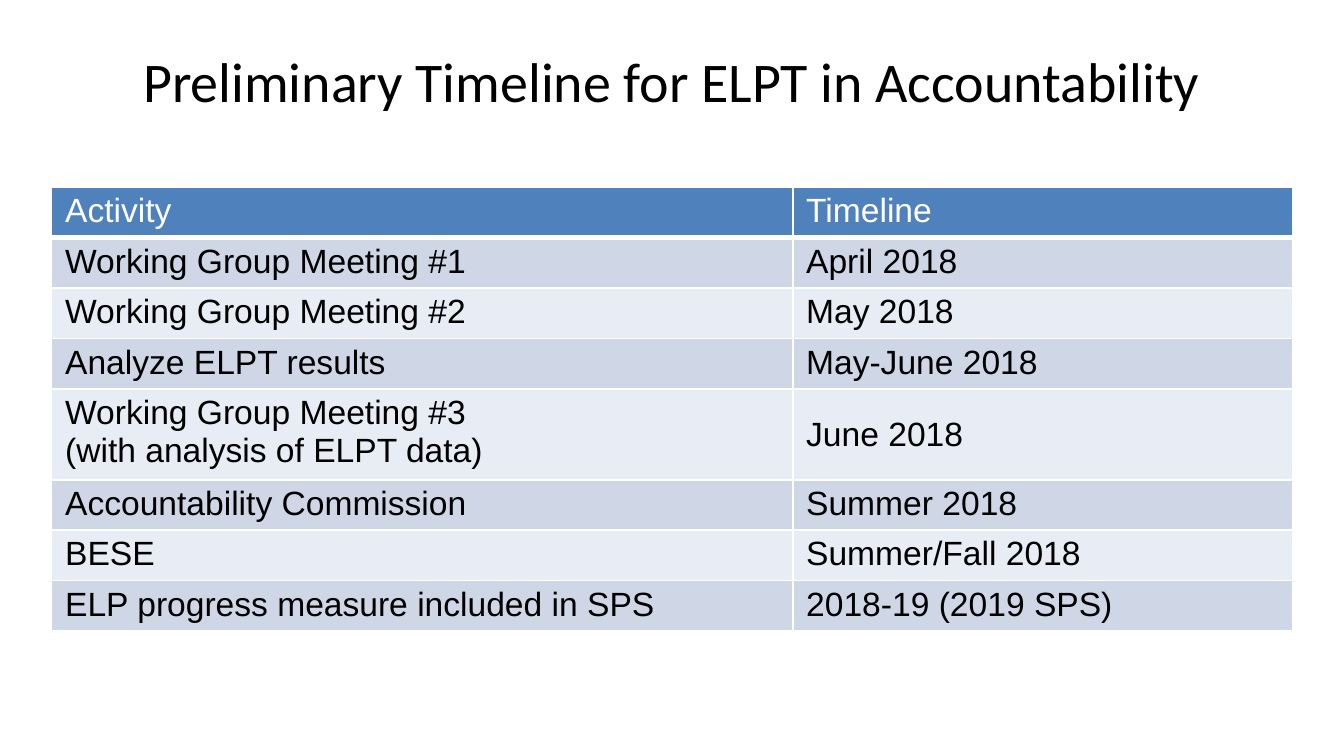
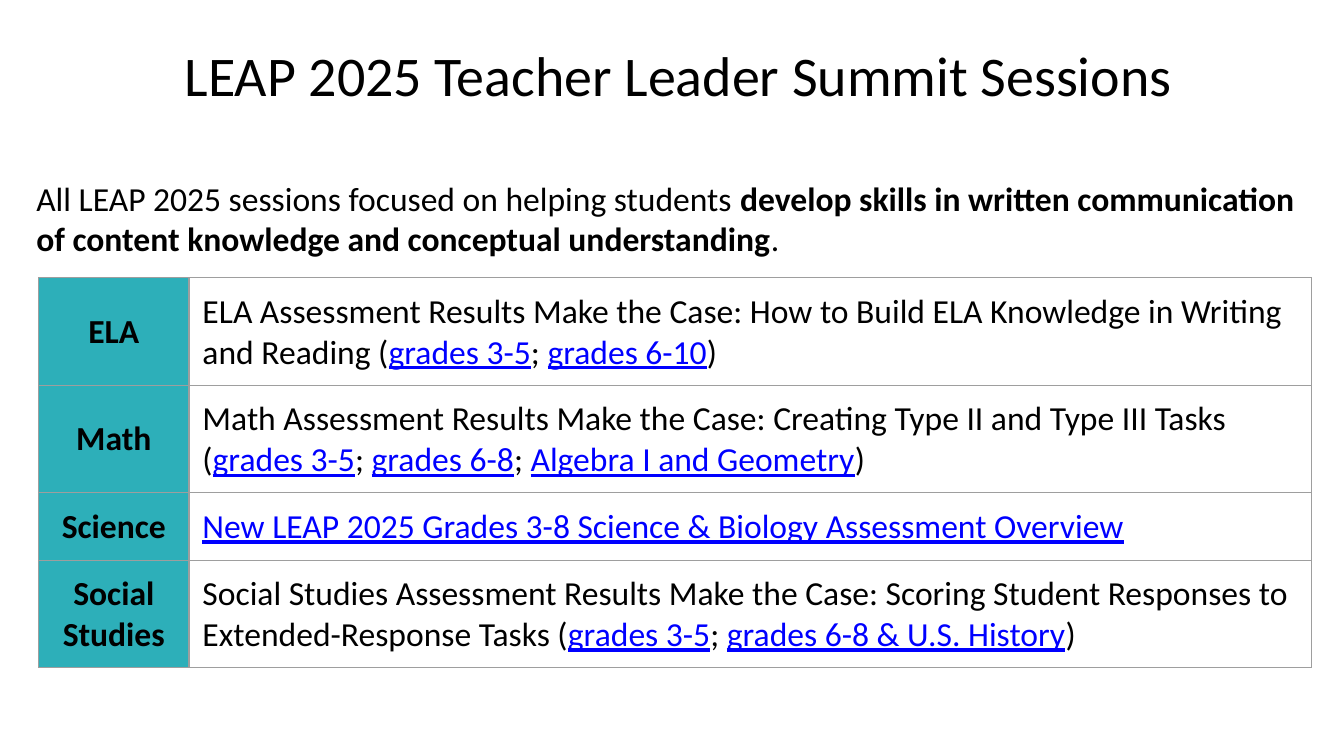
from dataclasses import dataclass, field
from typing import Any

from lxml.etree import SubElement
from pptx import Presentation
from pptx.dml.color import RGBColor
from pptx.enum.text import MSO_ANCHOR as Anchor, PP_ALIGN as Align
from pptx.oxml.ns import qn
from pptx.util import Pt


@dataclass(frozen=True)
class Theme:
    black: str = "000000"
    white: str = "FFFFFF"
    header: str = "4F81BD"
    bands: tuple[str, str] = ("CFD7E7", "E8ECF4")
    teal: str = "2DAFB9"
    grey: str = "9E9E9E"
    link: str = "0000FF"
    title_size: float = 30
    body_size: float = 18
    title_font: str = "Calibri"
    table_font: str = "Arial"


T = Theme()
LINK = {"color": T.link, "underline": True}
BOLD = {"bold": True}


@dataclass(frozen=True)
class TextStyle:
    size: float = T.body_size
    font: str = T.title_font
    color: str = T.black
    bold: bool | None = None
    align: Align = Align.LEFT
    marked: dict[str, Any] = field(default_factory=dict)  # format between "_" marks


@dataclass(frozen=True)
class Cell:
    text: str
    style: TextStyle
    fill: str | None = None
    anchor: Anchor = Anchor.MIDDLE


@dataclass(frozen=True)
class Grid:
    left: float
    top: float
    height: float
    cols: tuple[float, ...]
    rows: tuple[float, ...]
    margin_x: float
    margin_y: float
    border: str
    line: float
    header_line: float | None = None


TITLE = TextStyle(size=T.title_size, align=Align.CENTER)
INTRO = TextStyle(marked=BOLD)
SUBJECT = TextStyle(bold=True, align=Align.CENTER)
SESSION = TextStyle(marked=LINK)
HEADER = TextStyle(font=T.table_font, color=T.white)
ENTRY = TextStyle(font=T.table_font)


# Text
def write(tf, text: str, style: TextStyle) -> None:
    for i, line in enumerate(text.split("\n")):
        p = tf.add_paragraph() if i else tf.paragraphs[0]
        p.alignment = style.align
        for j, part in enumerate(line.split("_")):
            if not part:
                continue
            r = p.add_run()
            r.text = part
            values = {"name": style.font, "size": Pt(style.size), "bold": style.bold,
                      "color": style.color} | (style.marked if j % 2 else {})
            r.font.color.rgb = RGBColor.from_string(values.pop("color"))
            for name, value in values.items():
                setattr(r.font, name, value)


def add_text(s, box: tuple[float, ...], text: str, style: TextStyle,
             anchor: Anchor = Anchor.TOP, margin_y: float = 7.2) -> None:
    tf = s.shapes.add_textbox(*map(Pt, box)).text_frame
    formats = {"word_wrap": True, "vertical_anchor": anchor,
               "margin_left": Pt(7.2), "margin_right": Pt(7.2),
               "margin_top": Pt(margin_y), "margin_bottom": Pt(margin_y)}
    for name, value in formats.items():
        setattr(tf, name, value)
    write(tf, text, style)


# Tables
def add_border(cell, side: str, color: str, width: float) -> None:
    ln = SubElement(cell._tc.get_or_add_tcPr(), qn(f"a:ln{side}"), w=str(Pt(width)))
    fill = SubElement(ln, qn("a:solidFill"))
    SubElement(fill, qn("a:srgbClr"), val=color)


def add_grid(s, grid: Grid, rows: list[list[Cell]]) -> None:
    gf = s.shapes.add_table(len(rows), len(grid.cols), Pt(grid.left), Pt(grid.top),
                            Pt(sum(grid.cols)), Pt(grid.height))
    table = gf.table
    table.first_row = table.horz_banding = grid.header_line is not None
    for col, width in zip(table.columns, grid.cols):
        col.width = Pt(width)
    for row, height in zip(table.rows, grid.rows):
        row.height = Pt(height)
    gf.height = Pt(grid.height)
    for i, row in enumerate(rows):
        for j, item in enumerate(row):
            cell = table.cell(i, j)
            for side in "LRTB":
                under_header = (i, side) in ((0, "B"), (1, "T"))
                width = grid.header_line if under_header and grid.header_line else grid.line
                add_border(cell, side, grid.border, width)
            formats = {"vertical_anchor": item.anchor,
                       "margin_left": Pt(grid.margin_x), "margin_right": Pt(grid.margin_x),
                       "margin_top": Pt(grid.margin_y), "margin_bottom": Pt(grid.margin_y)}
            for name, value in formats.items():
                setattr(cell, name, value)
            if item.fill:
                cell.fill.solid()
                cell.fill.fore_color.rgb = RGBColor.from_string(item.fill)
            else:
                cell.fill.background()
            write(cell.text_frame, item.text, item.style)


# Slide content
TIMELINE = [
    ("Activity", "Timeline"),
    ("Working Group Meeting #1", "April 2018"),
    ("Working Group Meeting #2", "May 2018"),
    ("Analyze ELPT results", "May-June 2018"),
    ("Working Group Meeting #3\n(with analysis of ELPT data)", "June 2018"),
    ("Accountability Commission", "Summer 2018"),
    ("BESE", "Summer/Fall 2018"),
    ("ELP progress measure included in SPS", "2018-19 (2019 SPS)"),
]
SESSIONS = [
    ("ELA", "ELA Assessment Results Make the Case: How to Build ELA Knowledge in Writing "
            "and Reading (_grades 3-5_; _grades 6-10_)"),
    ("Math", "Math Assessment Results Make the Case: Creating Type II and Type III Tasks "
             "(_grades 3-5_; _grades 6-8_; _Algebra I and Geometry_)"),
    ("Science", "_New LEAP 2025 Grades 3-8 Science & Biology Assessment Overview_"),
    ("Social Studies", "Social Studies Assessment Results Make the Case: Scoring Student "
                       "Responses to Extended-Response Tasks "
                       "(_grades 3-5_; _grades 6-8 & U.S. History_)"),
]


def timeline_cell(row: int, text: str, two_line_row: bool) -> Cell:
    if row == 0:
        return Cell(text, HEADER, T.header, Anchor.TOP)
    anchor = Anchor.MIDDLE if two_line_row and "\n" not in text else Anchor.TOP
    return Cell(text, ENTRY, T.bands[(row - 1) % 2], anchor)


def build_timeline(s) -> None:
    add_text(s, (0, 0, 720, 85.7), "Preliminary Timeline for ELPT in Accountability",
             TITLE, Anchor.MIDDLE, margin_y=3.6)
    grid = Grid(27.7, 100.4, 237.6, (397, 268), (21.6,) * len(TIMELINE),
                7.2, 2.7, T.white, 1, header_line=3)
    add_grid(s, grid, [[timeline_cell(i, text, "\n" in row[0]) for text in row]
                       for i, row in enumerate(TIMELINE)])


def build_sessions(s) -> None:
    add_text(s, (7.2, 0, 712.8, 80), "LEAP 2025 Teacher Leader Summit Sessions",
             TITLE, Anchor.MIDDLE)
    add_text(s, (12.4, 88, 698.4, 53.3),
             "All LEAP 2025 sessions focused on helping students _develop skills in written "
             "communication of content knowledge and conceptual understanding_.", INTRO)
    grid = Grid(20.7, 148.8, 208.8, (80.6, 601.2), (29.5, 41.8, 34.6, 36),
                7.2, 7.2, T.grey, 0.75)
    add_grid(s, grid, [[Cell(subject, SUBJECT, T.teal), Cell(session, SESSION)]
                       for subject, session in SESSIONS])


def main() -> None:
    prs = Presentation()
    prs.slide_width, prs.slide_height = Pt(720), Pt(405)
    for build in (build_timeline, build_sessions):
        build(prs.slides.add_slide(prs.slide_layouts[6]))
    prs.save("out.pptx")


if __name__ == "__main__":
    main()
